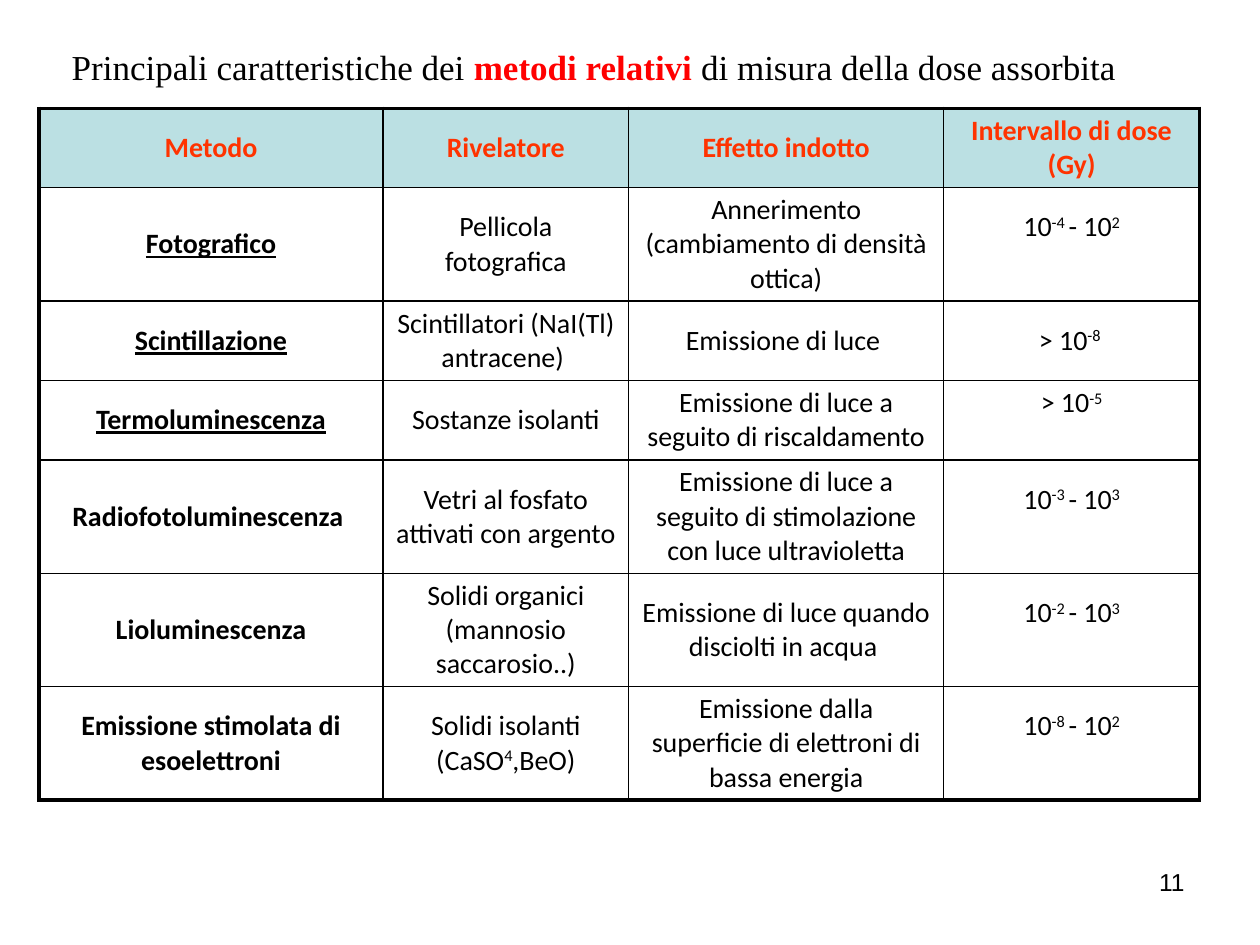
from dataclasses import dataclass

from lxml.etree import SubElement
from pptx import Presentation
from pptx.dml.color import RGBColor as RGB
from pptx.enum.text import MSO_ANCHOR as Anchor, MSO_AUTO_SIZE as AutoSize, PP_ALIGN as Align
from pptx.oxml.ns import qn
from pptx.util import Inches, Pt


@dataclass(frozen=True)
class Theme:
    ink: RGB = RGB.from_string("000000")
    red: RGB = RGB.from_string("FF0000")
    header_text: RGB = RGB.from_string("FF3300")
    header_fill: RGB = RGB.from_string("BBE0E3")
    title_font: str = "Times New Roman"
    table_font: str = "Calibri"
    number_font: str = "Arial"
    title_size: Pt = Pt(20)
    table_size: Pt = Pt(16)
    number_size: Pt = Pt(14)
    outer_line: Pt = Pt(2.25)
    inner_line: Pt = Pt(1)


THEME = Theme()
COL_WIDTHS = [2.73, 1.95, 2.5, 2.03]
ROW_HEIGHTS = [0.63, 0.9, 0.63, 0.63, 0.9, 0.9, 0.9]
# Text between carets is superscript.
ROWS = [
    ["Metodo", "Rivelatore", "Effetto indotto", "Intervallo di dose (Gy)"],
    ["Fotografico", "Pellicola fotografica",
     "Annerimento (cambiamento di densità ottica)", "10^-4 ^- 10^2"],
    ["Scintillazione", "Scintillatori (NaI(Tl) antracene) ",
     "Emissione di luce ", "> 10^-8 "],
    ["Termoluminescenza", "Sostanze isolanti",
     "Emissione di luce a seguito di riscaldamento", "> 10^-5"],
    ["Radiofotoluminescenza ", "Vetri al fosfato attivati con argento",
     "Emissione di luce a seguito di stimolazione con luce ultravioletta", "10^-3 ^- 10^3"],
    ["Lioluminescenza", "Solidi organici (mannosio saccarosio..)",
     "Emissione di luce quando disciolti in acqua ", "10^-2 ^- 10^3"],
    ["Emissione stimolata di esoelettroni", "Solidi isolanti (CaSO^4^,BeO)",
     "Emissione dalla superficie di elettroni di bassa energia", "10^-8 ^- 10^2"],
]
UNDERLINED_ROWS = {1, 2, 3}
RAISED_DOSE_ROWS = {1, 3, 4, 5, 6}


def add_run(p, text, color, **font):
    r = p.add_run()
    r.text = text
    r.font.color.rgb = color
    for name, value in font.items():
        setattr(r.font, name, value)
    return r


def add_text(slide, box, runs, align, **font):
    """Add a text box whose runs are (text, colour, bold)."""
    tf = slide.shapes.add_textbox(*map(Inches, box)).text_frame
    tf.word_wrap = True
    p = tf.paragraphs[0]
    p.alignment = align
    for text, color, bold in runs:
        add_run(p, text, color, bold=bold, **font)
    return tf


def set_borders(cell, widths):
    tc_pr = cell._tc.get_or_add_tcPr()
    for side, width in widths.items():
        ln = SubElement(tc_pr, qn(f"a:ln{side}"), w=str(width))
        fill = SubElement(ln, qn("a:solidFill"))
        SubElement(fill, qn("a:srgbClr"), val=str(THEME.ink))


def fill_cell(cell, row, col):
    header = row == 0
    ends = {"L": col == 0, "R": col == len(COL_WIDTHS) - 1,
            "T": header, "B": row == len(ROWS) - 1}
    set_borders(cell, {side: THEME.outer_line if end else THEME.inner_line
                       for side, end in ends.items()})
    if header:
        cell.fill.solid()
        cell.fill.fore_color.rgb = THEME.header_fill
    else:
        cell.fill.background()

    raised = col == 3 and row in RAISED_DOSE_ROWS
    layout = {"vertical_anchor": Anchor.MIDDLE, "margin_top": Inches(0.04),
              "margin_bottom": Inches(0.31 if raised else 0.04)}
    for name, value in layout.items():
        setattr(cell, name, value)

    p = cell.text_frame.paragraphs[0]
    p.alignment = Align.CENTER
    for i, text in enumerate(ROWS[row][col].split("^")):
        if not text:
            continue
        r = add_run(p, text, THEME.header_text if header else THEME.ink,
                    name=THEME.table_font, size=THEME.table_size,
                    bold=header or col == 0,
                    underline=col == 0 and row in UNDERLINED_ROWS)
        if i % 2:
            r.font._element.set("baseline", "30000")


def add_methods_table(slide):
    table = slide.shapes.add_table(
        len(ROWS), len(COL_WIDTHS), Inches(0.31), Inches(0.86),
        Inches(sum(COL_WIDTHS)), Inches(sum(ROW_HEIGHTS))).table
    table.first_row = table.horz_banding = False
    for column, width in zip(table.columns, COL_WIDTHS):
        column.width = Inches(width)
    for row, height in zip(table.rows, ROW_HEIGHTS):
        row.height = Inches(height)
    for row in range(len(ROWS)):
        for col in range(len(COL_WIDTHS)):
            fill_cell(table.cell(row, col), row, col)


def main():
    prs = Presentation()
    prs.slide_width, prs.slide_height = Inches(10), Inches(7.5)
    slide = prs.slides.add_slide(prs.slide_layouts[6])
    add_text(slide, (7.17, 6.83, 2.33, 0.52), [("11", THEME.ink, False)], Align.RIGHT,
             name=THEME.number_font, size=THEME.number_size)
    add_methods_table(slide)
    title = add_text(slide, (0.47, 0.31, 8.71, 0.44), [
        ("Principali caratteristiche dei ", THEME.ink, False),
        ("metodi relativi ", THEME.red, True),
        ("di misura della dose assorbita", THEME.ink, False),
    ], Align.LEFT, name=THEME.title_font, size=THEME.title_size)
    title.auto_size = AutoSize.SHAPE_TO_FIT_TEXT
    prs.save("out.pptx")


if __name__ == "__main__":
    main()
